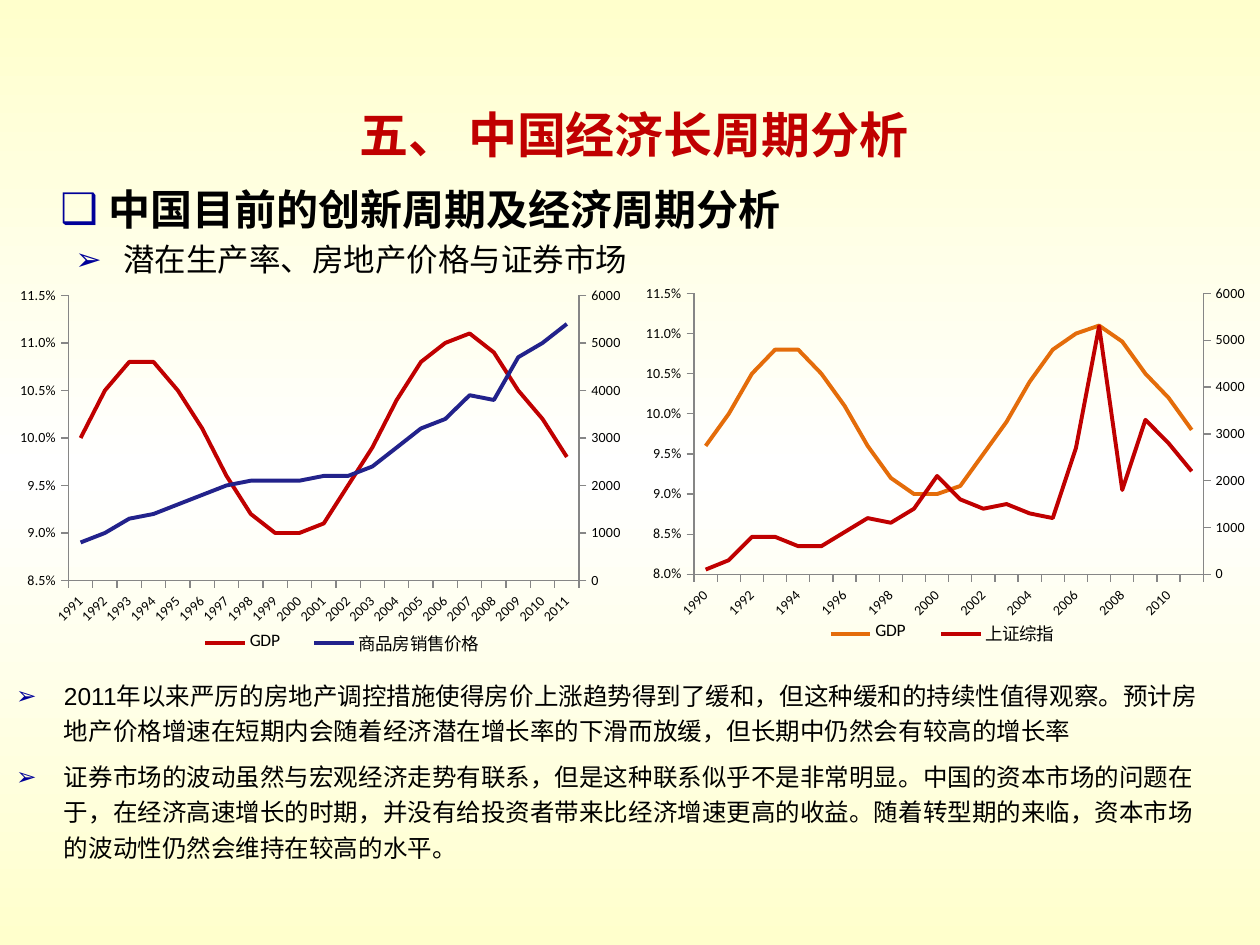
from copy import deepcopy

from lxml import etree
from pptx import Presentation
from pptx.chart.data import CategoryChartData
from pptx.dml.color import RGBColor
from pptx.enum import chart as ch, text
from pptx.oxml import parse_xml
from pptx.oxml.ns import nsdecls, qn
from pptx.util import Inches, Pt

RED = RGBColor(0xC0, 0x00, 0x00)
NAVY = RGBColor(0x22, 0x22, 0x8B)
ORANGE = RGBColor(0xE4, 0x6C, 0x0A)
BLACK = RGBColor(0, 0, 0)
GRAY = RGBColor(0x86, 0x86, 0x86)
CREAM = RGBColor(0xFF, 0xFF, 0xCC)
WHITE = RGBColor(0xFF, 0xFF, 0xFF)
BULLET = "000099"

TITLE = "五、 中国经济长周期分析"
HEADING = "中国目前的创新周期及经济周期分析"
SUBHEADING = "潜在生产率、房地产价格与证券市场"
FINDINGS = [
    "2011年以来严厉的房地产调控措施使得房价上涨趋势得到了缓和，但这种缓和的持续性值得观察。"
    "预计房地产价格增速在短期内会随着经济潜在增长率的下滑而放缓，但长期中仍然会有较高的增长率",
    "证券市场的波动虽然与宏观经济走势有联系，但是这种联系似乎不是非常明显。"
    "中国的资本市场的问题在于，在经济高速增长的时期，并没有给投资者带来比经济增速更高的收益。"
    "随着转型期的来临，资本市场的波动性仍然会维持在较高的水平。",
]
TEXTS = [
    ([HEADING], (0.38, 1.33, 7.58, 0.55), 24, True, "❑", 0.38),
    ([SUBHEADING], (0, 1.8, 9.84, 0.47), 18, False, "➢", 0.88),
    (FINDINGS, (0.03, 5.31, 9.66, 1.64), 14, False, "➢", 0.38),
]
CHARTS = [
    {
        "box": (0.16, 2.19, 4.77, 3.1), "first_year": 1991, "low": 0.085,
        "plot": (0.08, 0.05, 0.85, 0.73), "legend": (0.26, 0.9, 0.55, 0.08),
        "gdp": ("GDP", RED, [
            0.1, 0.105, 0.108, 0.108, 0.105, 0.101, 0.096, 0.092, 0.09, 0.09, 0.091,
            0.095, 0.099, 0.104, 0.108, 0.11, 0.111, 0.109, 0.105, 0.102, 0.098]),
        "market": ("商品房销售价格", NAVY, [
            800, 1000, 1300, 1400, 1600, 1800, 2000, 2100, 2100, 2100, 2200,
            2200, 2400, 2800, 3200, 3400, 3900, 3800, 4700, 5000, 5400]),
    },
    {
        "box": (5.01, 2.11, 4.99, 3.14), "first_year": 1990, "low": 0.08,
        "plot": (0.1, 0.07, 0.81, 0.71), "legend": (0.27, 0.89, 0.45, 0.08),
        "gdp": ("GDP", ORANGE, [
            0.096, 0.1, 0.105, 0.108, 0.108, 0.105, 0.101, 0.096, 0.092, 0.09, 0.09,
            0.091, 0.095, 0.099, 0.104, 0.108, 0.11, 0.111, 0.109, 0.105, 0.102, 0.098]),
        "market": ("上证综指", RED, [
            100, 300, 800, 800, 600, 600, 900, 1200, 1100, 1400, 2100,
            1600, 1400, 1500, 1300, 1200, 2700, 5300, 1800, 3300, 2800, 2200]),
    },
]


def add_text(slide, paragraphs, box, size, bold, color=BLACK, bullet=None, indent=0):
    frame = slide.shapes.add_textbox(*map(Inches, box)).text_frame
    frame.word_wrap = True
    for i, words in enumerate(paragraphs):
        para = frame.paragraphs[0] if i == 0 else frame.add_paragraph()
        para.text = words
        if bullet:
            para.line_spacing = 1.2
            if i:
                para.space_before = Pt(round(size * 0.4))
            props = para._p.get_or_add_pPr()
            props.set("marL", str(Inches(indent)))
            props.set("indent", str(Inches(-0.38)))
            color_el = etree.SubElement(props, qn("a:buClr"))
            etree.SubElement(color_el, qn("a:srgbClr"), val=BULLET)
            etree.SubElement(props, qn("a:buFont"), typeface="Arial")
            etree.SubElement(props, qn("a:buChar"), char=bullet)
        else:
            para.alignment = text.PP_ALIGN.CENTER
        para.font.size = Pt(size)
        para.font.bold = bold
        para.font.name = "Arial"
        para.font.color.rgb = color


def manual_layout(inner, fractions):
    layout = parse_xml(f"<c:layout {nsdecls('c')}><c:manualLayout/></c:layout>")
    modes = {"layoutTarget": "inner"} if inner else {}
    modes.update(xMode="edge", yMode="edge")
    for tag, value in {**modes, **dict(zip("xywh", fractions))}.items():
        etree.SubElement(layout[0], qn("c:" + tag), val=str(value))
    return layout


def style_axis(axis):
    axis.has_major_gridlines = False
    axis.major_tick_mark = ch.XL_TICK_MARK.OUTSIDE
    axis.minor_tick_mark = ch.XL_TICK_MARK.NONE
    axis.tick_labels.font.size = Pt(8)
    axis.format.line.color.rgb = GRAY


def set_scale(axis, low, high, step, number_format):
    axis.minimum_scale, axis.maximum_scale, axis.major_unit = low, high, step
    axis.tick_labels.number_format = number_format
    axis.tick_labels.number_format_is_linked = False


def replace_ids(element, ids):
    for tag in ("c:axId", "c:crossAx"):
        for node in element.iter(qn(tag)):
            node.set("val", ids[node.get("val")])


def move_to_right_axis(chart):
    left_plot = chart._chartSpace.find(".//" + qn("c:lineChart"))
    area = left_plot.getparent()
    right_plot = deepcopy(left_plot)
    left_plot.remove(left_plot.findall(qn("c:ser"))[1])
    right_plot.remove(right_plot.findall(qn("c:ser"))[0])
    left_plot.addnext(right_plot)
    years, values = area.find(qn("c:catAx")), area.find(qn("c:valAx"))
    ids = {axis.find(qn("c:axId")).get("val"): new for axis, new in ((years, "5001"), (values, "5002"))}
    hidden_years, right_values = deepcopy(years), deepcopy(values)
    for element in (right_plot, hidden_years, right_values):
        replace_ids(element, ids)
    hidden_years.find(qn("c:delete")).set("val", "1")
    right_values.find(qn("c:axPos")).set("val", "r")
    right_values.find(qn("c:crosses")).set("val", "max")
    values.addnext(right_values)
    right_values.addnext(hidden_years)
    return type(chart.value_axis)(right_values)


def add_cycle_chart(slide, spec):
    series = [spec["gdp"], spec["market"]]
    data = CategoryChartData()
    data.categories = [str(year) for year in range(spec["first_year"], 2012)]
    for name, _, values in series:
        data.add_series(name, values)
    chart = slide.shapes.add_chart(ch.XL_CHART_TYPE.LINE, *map(Inches, spec["box"]), data).chart
    chart.has_title = False
    chart.font.name, chart.font.size, chart.font.color.rgb = "Calibri", Pt(10), BLACK
    chart.plots[0].vary_by_categories = False
    for line, (_, color, _) in zip(chart.plots[0].series, series):
        line.smooth = False
        line.marker.style = ch.XL_MARKER_STYLE.NONE
        line.format.line.color.rgb = color
        line.format.line.width = Pt(2.25)
    year_axis, left_axis = chart.category_axis, chart.value_axis
    style_axis(year_axis)
    style_axis(left_axis)
    year_axis.tick_label_position = ch.XL_TICK_LABEL_POSITION.LOW
    year_axis._element.find(qn("c:txPr")).find(qn("a:bodyPr")).set("rot", "-2700000")
    right_axis = move_to_right_axis(chart)
    set_scale(left_axis, spec["low"], 0.115, 0.005, "0.0%")
    set_scale(right_axis, 0, 6000, 1000, "0")

    area = chart._chartSpace.find(".//" + qn("c:plotArea"))
    for old in area.findall(qn("c:layout")):
        area.remove(old)
    area.insert(0, manual_layout(True, spec["plot"]))
    chart.has_legend = True
    chart.legend.position = ch.XL_LEGEND_POSITION.RIGHT
    chart.legend.include_in_layout = False
    legend = chart.legend._element
    for old in legend.findall(qn("c:layout")):
        legend.remove(old)
    legend.find(qn("c:legendPos")).addnext(manual_layout(False, spec["legend"]))


def paint_background(slide):
    fill = slide.background.fill
    fill.gradient()
    fill.gradient_angle = 90
    first = fill.gradient_stops[0]._gs
    first.addnext(deepcopy(first))
    for stop, position, color in zip(fill.gradient_stops, (0, 0.5, 1), (CREAM, WHITE, CREAM)):
        stop.position = position
        stop.color.rgb = color


def main():
    prs = Presentation()
    prs.slide_width, prs.slide_height = Inches(10), Inches(7.5)
    slide = prs.slides.add_slide(prs.slide_layouts[6])
    paint_background(slide)
    for paragraphs, box, size, bold, bullet, indent in TEXTS:
        add_text(slide, paragraphs, box, size, bold, bullet=bullet, indent=indent)
    for spec in CHARTS:
        add_cycle_chart(slide, spec)
    add_text(slide, [TITLE], (0.62, 0.78, 8.82, 0.57), 28, True, RED)
    prs.save("out.pptx")


if __name__ == "__main__":
    main()
